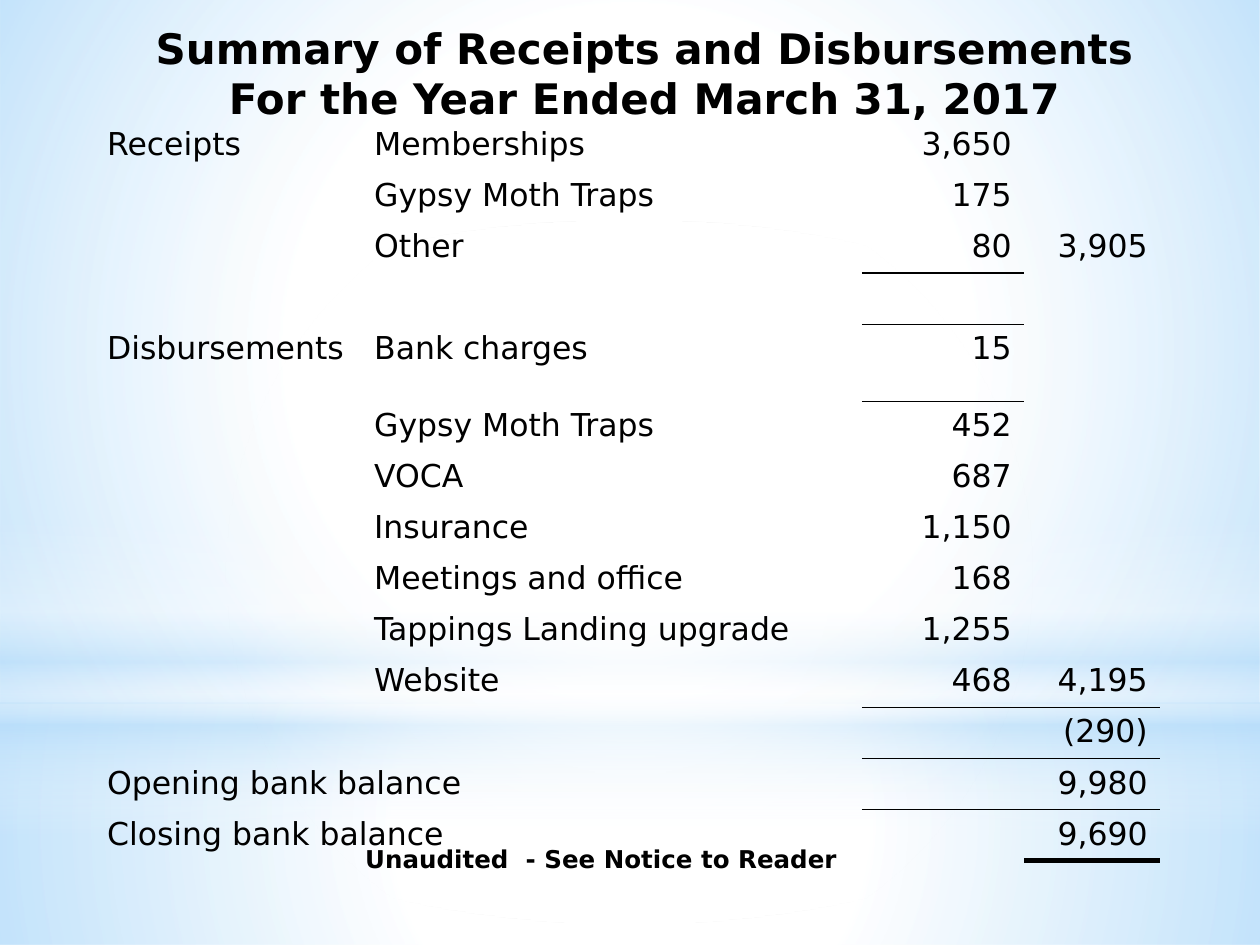
from dataclasses import dataclass

from lxml import etree
from pptx import Presentation
from pptx.dml.color import RGBColor
from pptx.enum.shapes import MSO_SHAPE as Preset
from pptx.enum.text import MSO_AUTO_SIZE as AutoSize, PP_ALIGN as Align
from pptx.oxml import parse_xml
from pptx.oxml.ns import nsdecls, qn
from pptx.util import Inches, Pt


@dataclass(frozen=True)
class Theme:
    font: str = "DejaVu Sans"
    ink: str = "000000"
    white: str = "FFFFFF"
    sky: str = "B4DCFA"
    title: int = 24
    body: int = 18
    note: int = 14
    rule: float = 1
    thin: float = 0.5
    total: float = 3


THEME = Theme()
WIDTH, HEIGHT = Inches(10), Inches(7.5)
PLAIN_TABLE = "{2D5ABB26-0587-4C30-8999-92F81FD0307C}"

COLUMNS = (2.12, 3.97, 1.29, 1.08)
ROW, TALL_ROW, TALL_INDEX = 0.39, 0.61, 4
LEDGER = (
    ("Receipts", "Memberships", "3,650", ""),
    ("", "Gypsy Moth Traps", "175", ""),
    ("", "Other", "80", "3,905"),
    ("", "", "", ""),
    ("Disbursements", "Bank charges", "15", ""),
    ("", "Gypsy Moth Traps", "452", ""),
    ("", "VOCA", "687", ""),
    ("", "Insurance", "1,150", ""),
    ("", "Meetings and office", "168", ""),
    ("", "Tappings Landing upgrade", "1,255", ""),
    ("", "Website", "468", "4,195"),
    ("", "", "", "(290)"),
    ("Opening bank balance", "", "", "9,980"),
    ("Closing bank balance", "", "", "9,690"),
    ("", "", "", ""),
)
MERGED_ROWS = (12, 13, 14)
# Row and column of the cell above each rule, then its weight
RULES = (
    (2, 2, THEME.rule), (3, 2, THEME.thin),
    (10, 2, THEME.rule), (10, 3, THEME.rule),
    (11, 2, THEME.thin), (12, 3, THEME.rule), (13, 3, THEME.total),
)

RADIAL = ('<a:path path="circle"><a:fillToRect l="50000" t="50000" '
          'r="50000" b="50000"/></a:path>')
LINEAR = '<a:lin ang="5400000" scaled="0"/>'


def style(para, size, bold=False, align=Align.LEFT):
    para.alignment = align
    para.font.size = Pt(size)
    for span in para.runs:
        span.font.name = THEME.font
        span.font.size = Pt(size)
        span.font.bold = bold
        span.font.color.rgb = RGBColor.from_string(THEME.ink)


def add_glow(page, preset, top, height, direction, stops):
    """Full-width gradient; each stop is position, colour, opacity in percent."""
    glow = page.shapes.add_shape(preset, 0, int(HEIGHT * top), WIDTH, int(HEIGHT * height))
    glow.shadow.inherit = False
    glow.line.fill.background()
    glow.fill.background()
    marks = "".join(
        f'<a:gs pos="{place * 1000}"><a:srgbClr val="{colour}">'
        f'<a:alpha val="{opacity * 1000}"/></a:srgbClr></a:gs>'
        for place, colour, opacity in stops)
    gradient = parse_xml(f'<a:gradFill {nsdecls("a")} rotWithShape="1">'
                         f'<a:gsLst>{marks}</a:gsLst>{direction}</a:gradFill>')
    properties = glow.fill._xPr
    properties.replace(properties.find(qn("a:noFill")), gradient)


def add_backdrop(page):
    white, sky = THEME.white, THEME.sky
    horizon = 0.744
    add_glow(page, Preset.RECTANGLE, horizon, 1 - horizon, RADIAL,
             ((0, white, 91), (37, white, 76), (100, sky, 79)))
    add_glow(page, Preset.RECTANGLE, 0, horizon, RADIAL,
             ((0, white, 89), (48, white, 62), (100, sky, 79)))
    add_glow(page, Preset.RECTANGLE, 0.55, 0.333, LINEAR,
             ((0, white, 0), (29, white, 30), (45, sky, 40),
              (55, white, 26), (65, sky, 60), (100, white, 0)))
    add_glow(page, Preset.OVAL, 0.233, horizon, RADIAL,
             ((0, white, 100), (56, white, 0)))


def add_edge(cell, tag, weight):
    properties = cell._tc.get_or_add_tcPr()
    edge = parse_xml(
        f'<a:{tag} {nsdecls("a")} w="{Pt(weight)}"><a:solidFill>'
        f'<a:srgbClr val="{THEME.ink}"/></a:solidFill></a:{tag}>')
    # Top goes first, bottom just before the fill
    properties.insert(0 if tag == "lnT" else len(properties) - 1, edge)


def add_ledger(page):
    heights = [TALL_ROW if row == TALL_INDEX else ROW for row in range(len(LEDGER))]
    frame = page.shapes.add_table(
        len(LEDGER), len(COLUMNS), Inches(0.75), Inches(0.95),
        Inches(sum(COLUMNS)), Inches(sum(heights)))
    table = frame.table
    table.first_row = table.horz_banding = False
    table_properties = table._tbl.tblPr
    style_id = table_properties.find(qn("a:tableStyleId"))
    if style_id is None:
        style_id = etree.SubElement(table_properties, qn("a:tableStyleId"))
    style_id.text = PLAIN_TABLE

    for column, width in zip(table.columns, COLUMNS):
        column.width = Inches(width)
    for row, height in zip(table.rows, heights):
        row.height = Inches(height)
    for row, entries in enumerate(LEDGER):
        for column, entry in enumerate(entries):
            cell = table.cell(row, column)
            cell.fill.background()
            cell.text_frame.text = entry
            style(cell.text_frame.paragraphs[0], THEME.body,
                  align=Align.RIGHT if column >= 2 else Align.LEFT)
    for row in MERGED_ROWS:
        table.cell(row, 0).merge(table.cell(row, 1))
    for row, column, weight in RULES:
        add_edge(table.cell(row, column), "lnB", weight)
        add_edge(table.cell(row + 1, column), "lnT", weight)


def add_caption(page, text, place, size, align):
    box = page.shapes.add_textbox(*(Inches(length) for length in place))
    box.text_frame.word_wrap = True
    box.text_frame.auto_size = AutoSize.SHAPE_TO_FIT_TEXT
    box.text_frame.text = text
    style(box.text_frame.paragraphs[0], size, bold=True, align=align)


def main():
    deck = Presentation()
    deck.slide_width, deck.slide_height = WIDTH, HEIGHT
    page = deck.slides.add_slide(deck.slide_layouts[6])
    add_backdrop(page)
    add_ledger(page)
    # Footnote and title
    add_caption(page, "Unaudited  - See Notice to Reader",
                (2.8, 6.65, 4.02, 0.34), THEME.note, Align.LEFT)
    add_caption(page, "Summary of Receipts and Disbursements\v"
                "For the Year Ended March 31, 2017",
                (0.43, 0.13, 9.37, 0.91), THEME.title, Align.CENTER)
    deck.save("out.pptx")


if __name__ == "__main__":
    main()
